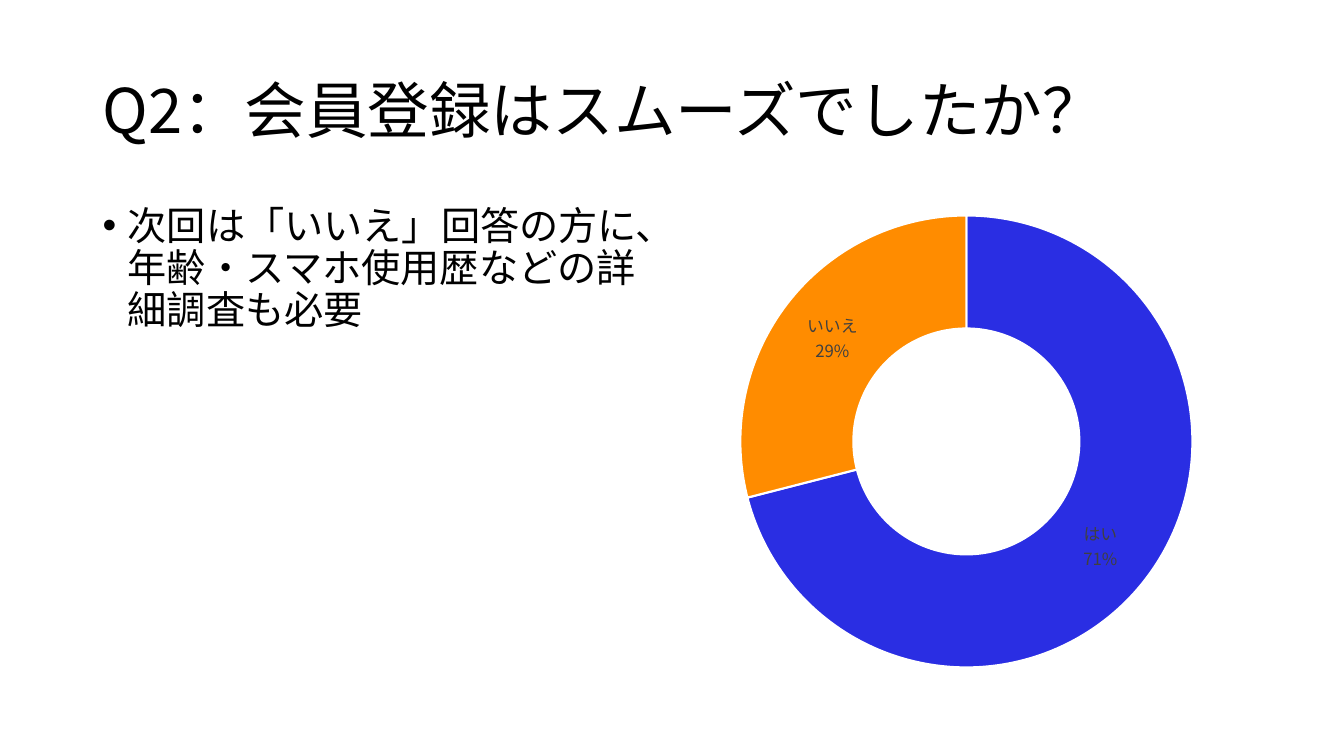
from lxml import etree
from pptx import Presentation
from pptx.chart.data import CategoryChartData
from pptx.dml.color import RGBColor
from pptx.enum.chart import XL_CHART_TYPE
from pptx.enum.text import MSO_ANCHOR, MSO_AUTO_SIZE, PP_ALIGN
from pptx.oxml.ns import qn
from pptx.util import Inches, Pt

FONT = "Noto Sans CJK JP"
COLORS = {
    "text": "000000",
    "label": "404040",
    "yes": "2A2EE3",
    "no": "FF8C00",
    "gap": "FFFFFF",
}


def write_text(shape, text, size, line_spacing, anchor, bullet=None):
    frame = shape.text_frame
    frame.word_wrap = True
    frame.auto_size = MSO_AUTO_SIZE.NONE
    frame.vertical_anchor = anchor
    paragraph = frame.paragraphs[0]
    paragraph.alignment = PP_ALIGN.LEFT
    paragraph.line_spacing = line_spacing
    run = paragraph.add_run()
    run.text = text
    run.font.size = Pt(size)
    run.font.name = FONT
    run.font.color.rgb = RGBColor.from_string(COLORS["text"])
    east_asian = etree.SubElement(run.font._element, qn("a:ea"))
    east_asian.set("typeface", FONT)
    if bullet:
        properties = paragraph._p.get_or_add_pPr()
        properties.set("marL", str(Inches(0.25)))
        properties.set("indent", str(Inches(-0.25)))
        etree.SubElement(properties, qn("a:buFont")).set("typeface", "Arial")
        etree.SubElement(properties, qn("a:buChar")).set("char", bullet)


presentation = Presentation()
presentation.slide_width = Inches(13.33)
presentation.slide_height = Inches(7.5)
slide = presentation.slides.add_slide(presentation.slide_layouts[5])

title = slide.shapes.title
title.left, title.top = Inches(0.92), Inches(0.4)
title.width, title.height = Inches(11.5), Inches(1.45)
write_text(title, "Q2：会員登録はスムーズでしたか？", size=44,
           line_spacing=0.9, anchor=MSO_ANCHOR.MIDDLE)

content_top, content_width, content_height = Inches(2), Inches(5.67), Inches(4.76)
comment = slide.shapes.add_textbox(Inches(0.92), content_top, content_width, content_height)
write_text(comment, "次回は「いいえ」回答の方に、年齢・スマホ使用歴などの詳細調査も必要",
           size=28, line_spacing=Pt(30), anchor=MSO_ANCHOR.TOP, bullet="•")

answers = CategoryChartData()
answers.categories = ["はい", "いいえ"]
answers.add_series("Series 1", (71, 29))
chart = slide.shapes.add_chart(XL_CHART_TYPE.DOUGHNUT, Inches(6.75), content_top,
                               content_width, content_height, answers).chart
chart.has_title = False
chart.has_legend = False
chart.font.name = FONT
chart.font.size = Pt(10)
chart.font.color.rgb = RGBColor.from_string(COLORS["text"])

plot = chart.plots[0]
plot.vary_by_categories = True
plot._element.find(qn("c:holeSize")).set("val", "50")
for index, answer in enumerate(("yes", "no")):
    point_format = plot.series[0].points[index].format
    point_format.fill.solid()
    point_format.fill.fore_color.rgb = RGBColor.from_string(COLORS[answer])
    point_format.line.color.rgb = RGBColor.from_string(COLORS["gap"])
    point_format.line.width = Pt(1.5)

labels = plot.series[0].data_labels
labels.show_value = False
labels.show_category_name = True
labels.show_percentage = True
labels.number_format = "0%"
labels.number_format_is_linked = False
labels.font.name = FONT
labels.font.size = Pt(12)
labels.font.color.rgb = RGBColor.from_string(COLORS["label"])
separator = etree.Element(qn("c:separator"))
separator.text = "\n"
labels._element.find(qn("c:showBubbleSize")).addnext(separator)

presentation.save("out.pptx")
